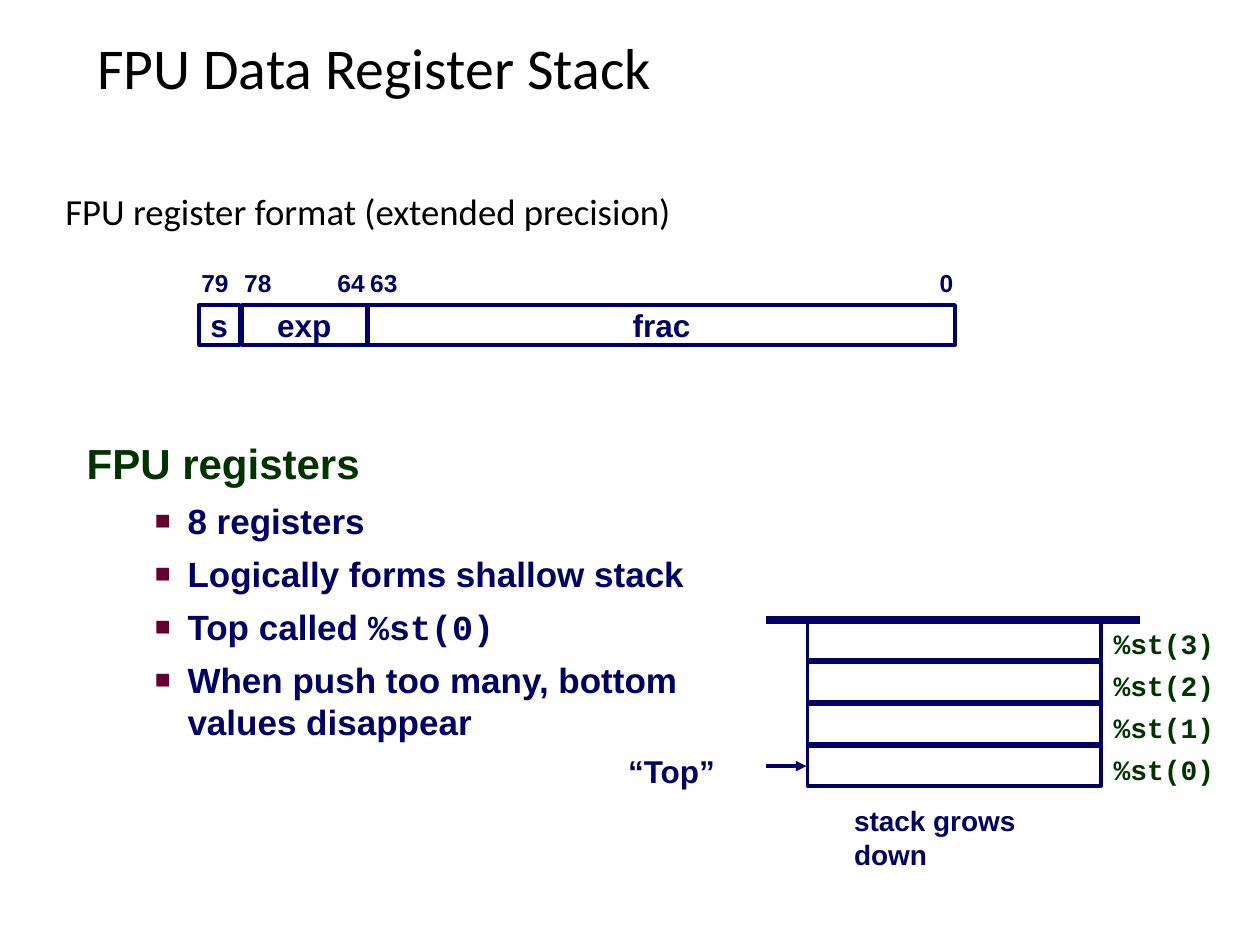
from lxml import etree
from pptx import Presentation
from pptx.dml.color import RGBColor
from pptx.enum.shapes import MSO_CONNECTOR, MSO_SHAPE
from pptx.enum.text import MSO_ANCHOR, MSO_AUTO_SIZE, PP_ALIGN
from pptx.oxml.ns import qn
from pptx.util import Inches, Pt

NAVY = RGBColor(0x00, 0x00, 0x66)
GREEN = RGBColor(0x00, 0x33, 0x00)
BLACK = RGBColor(0, 0, 0)
WHITE = RGBColor(0xFF, 0xFF, 0xFF)
PLUM = RGBColor(0x66, 0x00, 0x33)
LEFT, CENTER = PP_ALIGN.LEFT, PP_ALIGN.CENTER
MIDDLE = MSO_ANCHOR.MIDDLE
GROW = MSO_AUTO_SIZE.SHAPE_TO_FIT_TEXT
RECT, LINE = MSO_SHAPE.RECTANGLE, MSO_CONNECTOR.STRAIGHT
MONO = "Courier New"


def write(para, text, size=18, font="Arial", color=NAVY, bold=True,
          align=LEFT, space=None):
    run = para.add_run()
    run.text = text
    run.font.size, run.font.name, run.font.bold = Pt(size), font, bold
    run.font.color.rgb = color
    para.alignment = align
    if space:
        para.line_spacing = space


def label(slide, text, x, y, w, h, wrap=False, grow=True, **form):
    box = slide.shapes.add_textbox(Inches(x), Inches(y), Inches(w), Inches(h))
    frame = box.text_frame
    frame.word_wrap = wrap
    if grow:
        frame.auto_size = GROW
    write(frame.paragraphs[0], text, **form)
    return frame


def cell(slide, x, y, w, h, text=None):
    box = slide.shapes.add_shape(RECT, Inches(x), Inches(y), Inches(w), Inches(h))
    box.shadow.inherit = False
    box.fill.solid()
    box.fill.fore_color.rgb = WHITE
    box.line.color.rgb = NAVY
    box.line.width = Pt(2)
    if text:
        frame = box.text_frame
        frame.word_wrap = False
        frame.vertical_anchor = MIDDLE
        write(frame.paragraphs[0], text, align=CENTER)


def rule(slide, x, y, w, width, arrow=False):
    line = slide.shapes.add_connector(
        LINE, Inches(x), Inches(y), Inches(x + w), Inches(y))
    line.line.color.rgb = NAVY
    line.line.width = Pt(width)
    if arrow:
        etree.SubElement(line.line._get_or_add_ln(), qn("a:tailEnd"), type="triangle")
    etree.SubElement(line._element.spPr, qn("a:effectLst"))


def bullet(para):
    props = para._p.get_or_add_pPr()
    props.set("marL", str(Inches(0.8)))
    props.set("indent", str(Inches(-0.26)))
    tint = etree.SubElement(props, qn("a:buClr"))
    etree.SubElement(tint, qn("a:srgbClr"), val=str(PLUM))
    etree.SubElement(props, qn("a:buSzPct"), val="75000")
    etree.SubElement(props, qn("a:buFont"), typeface="Arial")
    etree.SubElement(props, qn("a:buChar"), char="■")


def heading(slide, x, y, w, h):
    title = slide.shapes.title
    title.left, title.top = Inches(x), Inches(y)
    title.width, title.height = Inches(w), Inches(h)
    title.text_frame.vertical_anchor = MIDDLE
    write(title.text_frame.paragraphs[0], "FPU Data Register Stack", size=33,
          font="Calibri", color=BLACK, bold=False, space=0.9)


def layout(slide, x, y):
    fields = [("s", 0, 0.32), ("exp", 0.34, 0.99), ("frac", 1.34, 4.66)]
    for text, dx, w in fields:
        cell(slide, x + dx, y, w, 0.32, text)
    bits = [("79", -0.08), ("78", 0.26), ("64", 1), ("63", 1.26), ("0", 5.78)]
    for text, dx in bits:
        label(slide, text, x + dx, y - 0.34, 0.22 + 0.11 * len(text), 0.33, size=14)


def facts(slide, x, y, w, h):
    frame = label(slide, "FPU registers", x, y, w, h, wrap=True, grow=False,
                  size=24, color=GREEN, space=0.95)
    frame.margin_top = Inches(0.67)
    points = [
        [("8 registers", "Arial")],
        [("Logically forms shallow stack", "Arial")],
        [("Top called ", "Arial"), ("%st(0)", MONO)],
        [("When push too many, bottom values disappear", "Arial")],
    ]
    for point in points:
        para = frame.add_paragraph()
        para.level = 1
        para.space_before = Pt(6.2)
        for text, font in point:
            write(para, text, size=20, font=font, space=1.0)
        bullet(para)


def stack(slide, x, y, w, count=4):
    step = 1 / 3
    for i in range(count):
        top = y + i * step
        cell(slide, x, top, w, 0.32)
        label(slide, f"%st({count - 1 - i})", x + w, top, 1, 0.37,
              size=16, font=MONO, color=GREEN)
    rule(slide, x - 0.33, y, 2.97, 4.5)
    last = y + (count - 1) * step
    rule(slide, x - 0.33, last + 0.16, 0.32, 2, arrow=True)
    label(slide, "“Top” ", x - 1.58, last, 1.07, 0.4, wrap=True, align=CENTER)
    label(slide, "stack grows down", x + 0.27, y + 1.41, 2.05, 0.37,
          wrap=True, size=16)


def main():
    deck = Presentation()
    deck.slide_width, deck.slide_height = Inches(10), Inches(7.5)
    slide = deck.slides.add_slide(deck.slide_layouts[5])
    heading(slide, 0.67, 0.25, 7.32, 0.63)
    label(slide, "FPU register format (extended precision)", 0.42, 1.49, 6.79, 0.56,
          wrap=True, grow=False, size=21, font="Calibri", color=BLACK,
          bold=False, space=0.9)
    layout(slide, 1.58, 2.42)
    facts(slide, 0.59, 2.83, 5, 3.92)
    stack(slide, 6.41, 4.92, 2.33)
    deck.save("out.pptx")


if __name__ == "__main__":
    main()
